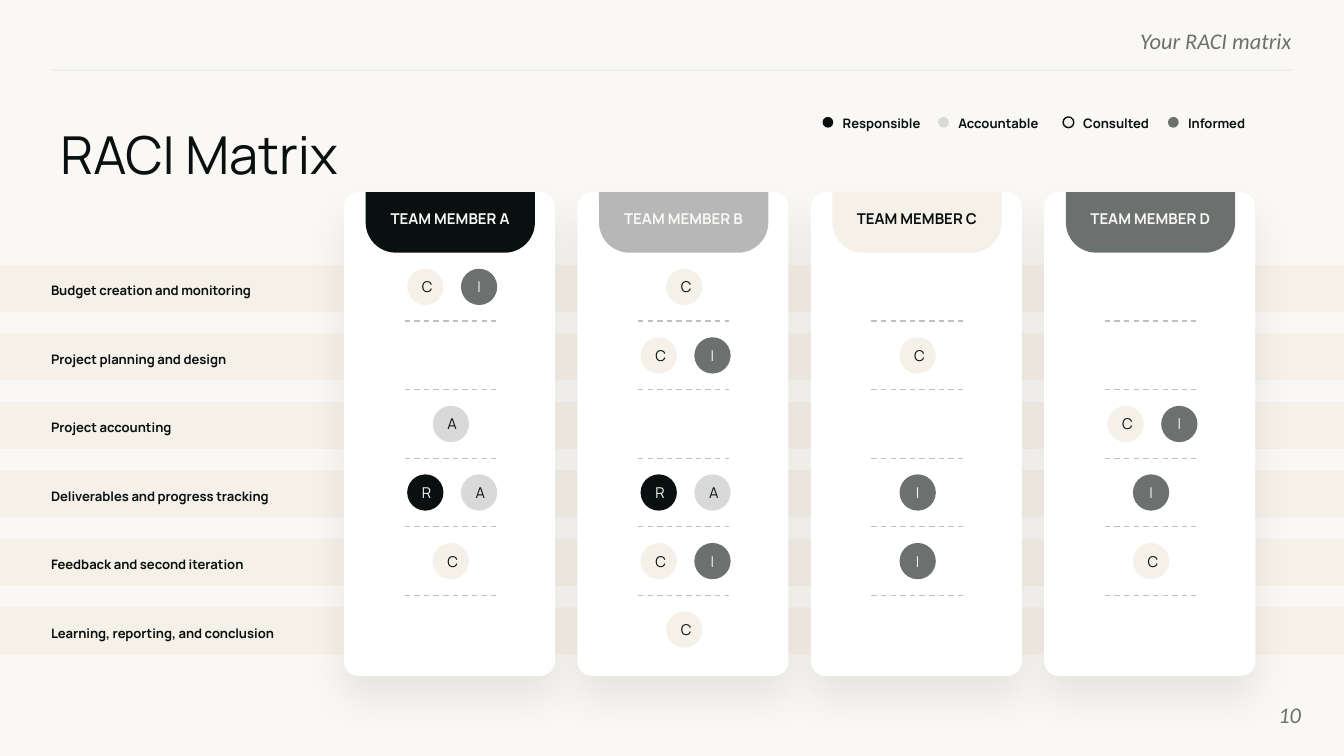
from lxml import etree
from pptx import Presentation
from pptx.dml.color import RGBColor
from pptx.enum import dml, shapes, text
from pptx.oxml import ns
from pptx.util import Inches, Pt

COLORS = {
    "paper": "F9F8F5", "cream": "F5F1E8", "white": "FFFFFF", "ink": "09100F",
    "gray": "6C706F", "silver": "B7B7B7", "pale": "D9D9D9", "dash": "BFBFBF",
    "rule": "EFEFEF", "black": "000000",
}
FONT, NOTE_FONT = "Manrope", "Calibri"

# Content: tasks, members with their roles per task, and the legend
TASKS = [
    "Budget creation and monitoring",
    "Project planning and design",
    "Project accounting",
    "Deliverables and progress tracking",
    "Feedback and second iteration",
    "Learning, reporting, and conclusion",
]
MEMBERS = [  # name, tab fill, tab text, roles for each task
    ("TEAM MEMBER A", "ink", "paper", ["CI", "", "A", "RA", "C", ""]),
    ("TEAM MEMBER B", "silver", "paper", ["C", "CI", "", "RA", "CI", "C"]),
    ("TEAM MEMBER C", "cream", "ink", ["", "C", "", "I", "I", ""]),
    ("TEAM MEMBER D", "gray", "paper", ["", "", "CI", "I", "C", ""]),
]
ROLES = {  # letter: fill, text
    "R": ("ink", "paper"), "A": ("pale", "ink"),
    "C": ("cream", "ink"), "I": ("gray", "paper"),
}
LEGEND = [  # label, dot left, label width, role, outline
    ("Responsible", 6.12, 0.85, "R", None),
    ("Accountable", 6.98, 0.85, "A", None),
    ("Consulted", 7.91, 0.7, "C", "ink"),
    ("Informed", 8.69, 0.67, "I", None),
]

# Grid
ROW_STEP = 0.51
COLUMN_LEFT, COLUMN_STEP = 2.56, 5.21 / 3
CARD_TOP, CARD_WIDTH, CARD_HEIGHT = 1.43, 1.57, 3.6
CHIP_OFFSETS = {0: [], 1: [0.66], 2: [0.47, 0.87]}
CHIP = 0.27
PADDING = (0.07, 0.04)

deck = Presentation()
deck.slide_width = Inches(10)
deck.slide_height = deck.slide_width * 9 // 16
page = deck.slides.add_slide(deck.slide_layouts[6])


def rgb(name):
    return RGBColor.from_string(COLORS[name])


def write(box, words, size, color, font=FONT, bold=None, italic=None,
          align=None, anchor=text.MSO_ANCHOR.TOP, padding=PADDING, spacing=None):
    frame = box.text_frame
    frame.text = words
    frame.word_wrap = True
    frame.vertical_anchor = anchor
    frame.margin_left = frame.margin_right = Inches(padding[0])
    frame.margin_top = frame.margin_bottom = Inches(padding[1])
    para = frame.paragraphs[0]
    para.alignment = align
    para.line_spacing = spacing
    style = para.runs[0].font
    style.name, style.size, style.bold, style.italic = font, Pt(size), bold, italic
    style.color.rgb = rgb(color)


def add_text(left, top, width, height, words, size, color, grow=False, **style):
    box = page.shapes.add_textbox(*map(Inches, (left, top, width, height)))
    write(box, words, size, color, **style)
    if grow:
        box.text_frame.auto_size = text.MSO_AUTO_SIZE.SHAPE_TO_FIT_TEXT


def add_shape(kind, left, top, width, height, fill, outline=None):
    shape = page.shapes.add_shape(kind, *map(Inches, (left, top, width, height)))
    shape.shadow.inherit = False
    shape.fill.solid()
    shape.fill.fore_color.rgb = rgb(fill)
    if outline:
        shape.line.color.rgb = rgb(outline)
        shape.line.width = Pt(0.75)
    else:
        shape.line.fill.background()
    return shape


def add_line(left, right, y, color, dash=None):
    line = page.shapes.add_connector(
        shapes.MSO_CONNECTOR.STRAIGHT, *map(Inches, (left, y, right, y)))
    line.line.color.rgb = rgb(color)
    line.line.width = Pt(0.75)
    if dash:
        line.line.dash_style = dash
    etree.SubElement(line._element.spPr, ns.qn("a:effectLst"))


def add_soft_shadow(shape):
    effects = shape._element.spPr.find(ns.qn("a:effectLst"))
    shadow = etree.SubElement(
        effects, ns.qn("a:outerShdw"), blurRad=str(Pt(21)), dist=str(Pt(12)),
        dir="5400000", algn="t", rotWithShape="0")
    color = etree.SubElement(shadow, ns.qn("a:srgbClr"), val=COLORS["black"])
    etree.SubElement(color, ns.qn("a:alpha"), val="7000")


SHAPE, ALIGN, ANCHOR = shapes.MSO_SHAPE, text.PP_ALIGN, text.MSO_ANCHOR

# Background and running header
page.background.fill.solid()
page.background.fill.fore_color.rgb = rgb("paper")
note = dict(font=NOTE_FONT, italic=True, align=ALIGN.RIGHT, padding=(0, 0))
add_text(5.76, 0.2, 3.85, 0.18, "Your RACI matrix", 12, "gray", **note)
add_line(0.39, 9.61, 0.52, "rule")

# Task bands
for row in range(len(TASKS)):
    band = add_shape(SHAPE.ROUNDED_RECTANGLE, 0, 1.97 + row * ROW_STEP, 10, 0.35, "cream")
    band.adjustments[0] = 0

# Member cards with tabs, dividers and role chips
for column, (name, tab_fill, tab_text, duties) in enumerate(MEMBERS):
    left = COLUMN_LEFT + column * COLUMN_STEP
    card = add_shape(SHAPE.ROUNDED_RECTANGLE, left, CARD_TOP, CARD_WIDTH, CARD_HEIGHT, "white")
    card.adjustments[0] = 0.07
    add_soft_shadow(card)
    tab = add_shape(SHAPE.ROUND_2_SAME_RECTANGLE, left + 0.16, CARD_TOP, 1.26, 0.45, tab_fill)
    tab.adjustments[0] = 0.5
    tab.rotation = 180
    add_text(left + 0.24, 1.52, 1.1, 0.21, name, 8, tab_text,
             grow=True, bold=True, align=ALIGN.CENTER)

    for row in range(len(TASKS) - 1):
        add_line(left + 0.45, left + 1.13, 2.39 + row * ROW_STEP, "dash",
                 dml.MSO_LINE_DASH_STYLE.DASH)
    for row, letters in enumerate(duties):
        for letter, offset in zip(letters, CHIP_OFFSETS[len(letters)]):
            fill, color = ROLES[letter]
            chip = add_shape(SHAPE.OVAL, left + offset, 2 + row * ROW_STEP, CHIP, CHIP, fill)
            write(chip, letter, 8, color, align=ALIGN.CENTER, anchor=ANCHOR.MIDDLE)

# Task labels
for row, task in enumerate(TASKS):
    add_text(0.31, 2.04 + row * ROW_STEP, 2.4, 0.19, task, 7, "ink", grow=True,
             bold=True, anchor=ANCHOR.MIDDLE, spacing=1.44)

# Legend
for label, left, width, role, outline in LEGEND:
    add_shape(SHAPE.OVAL, left, 0.87, 0.08, 0.08, ROLES[role][0], outline)
    add_text(left + 0.08, 0.82, width, 0.19, label, 7, "ink", grow=True, bold=True)

# Title and page number
add_text(0.45, 0.91, 2.57, 0.51, "RACI Matrix", 28, "ink", padding=(0, 0))
add_text(9.08, 5.1, 0.6, 0.43, "10", 12, "gray", anchor=ANCHOR.MIDDLE, **note)

deck.save("out.pptx")
